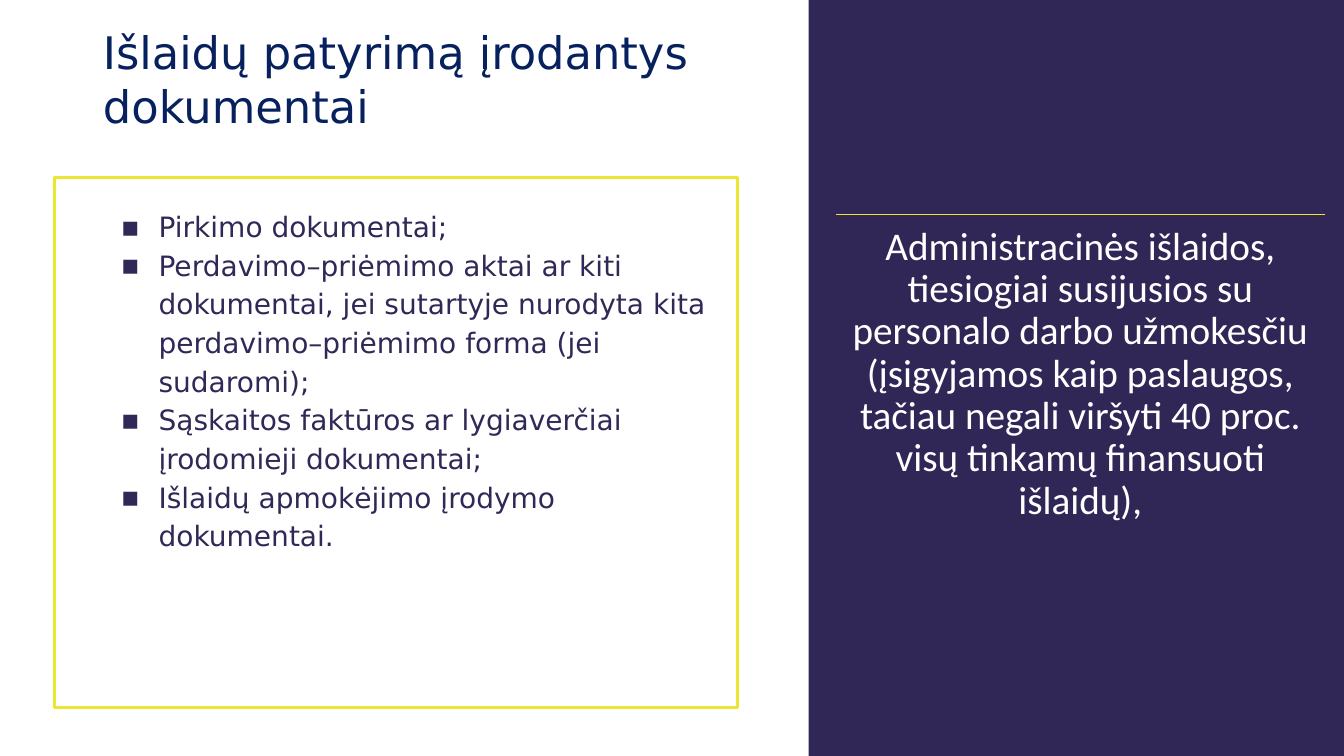
from lxml.etree import SubElement
from pptx import Presentation
from pptx.dml.color import RGBColor
from pptx.enum.shapes import MSO_CONNECTOR, MSO_SHAPE
from pptx.enum.text import PP_ALIGN
from pptx.oxml.ns import qn
from pptx.util import Pt

NAVY, PURPLE, INK = "07215E", "302757", "302857"
YELLOW, WHITE = "EDE630", "FFFFFF"
HEADING_FONT, PANEL_FONT = "DejaVu Sans", "Calibri"
SLIDE_WIDTH, SLIDE_HEIGHT = 960, 540

EVIDENCE = [
    "Pirkimo dokumentai;",
    "Perdavimo–priėmimo aktai ar kiti dokumentai, jei sutartyje nurodyta kita "
    "perdavimo–priėmimo forma (jei sudaromi);",
    "Sąskaitos faktūros ar lygiaverčiai įrodomieji dokumentai;",
    "Išlaidų apmokėjimo įrodymo dokumentai.",
]
ADMIN_COSTS = (
    "Administracinės išlaidos, tiesiogiai susijusios su personalo darbo užmokesčiu "
    "(įsigyjamos kaip paslaugos, tačiau negali viršyti 40 proc. visų tinkamų "
    "finansuoti išlaidų),"
)


def color(hex_code):
    return RGBColor.from_string(hex_code)


class SlideBuilder:
    def __init__(self, slide):
        self.shapes = slide.shapes

    def rectangle(self, left, top, width, height, fill=None, outline=None):
        box = self.shapes.add_shape(
            MSO_SHAPE.RECTANGLE, Pt(left), Pt(top), Pt(width), Pt(height))
        box.shadow.inherit = False
        if fill:
            box.fill.solid()
            box.fill.fore_color.rgb = color(fill)
        else:
            box.fill.background()
        if outline:
            box.line.color.rgb = color(outline)
            box.line.width = Pt(2.25)
        else:
            box.line.fill.background()

    def rule(self, left, top, width):
        """Draw a thin horizontal yellow line."""
        line = self.shapes.add_connector(
            MSO_CONNECTOR.STRAIGHT, Pt(left), Pt(top), Pt(left + width), Pt(top))
        line.line.color.rgb = color(YELLOW)
        line.line.width = Pt(1)
        SubElement(line._element.spPr, qn("a:effectLst"))

    def text(self, left, top, width, height, paragraphs, size, ink, font=HEADING_FONT,
             align=PP_ALIGN.LEFT, spacing=1.0, inset=None, bullet=None):
        box = self.shapes.add_textbox(Pt(left), Pt(top), Pt(width), Pt(height))
        frame = box.text_frame
        frame.word_wrap = True
        if inset is not None:
            frame.margin_left = frame.margin_right = Pt(inset)
            frame.margin_top = frame.margin_bottom = Pt(inset)
        frame.text = "\n".join(paragraphs)
        for paragraph in frame.paragraphs:
            paragraph.alignment = align
            paragraph.line_spacing = spacing
            if bullet:
                self.add_bullet(paragraph, bullet)
            for run in paragraph.runs:
                run.font.size = Pt(size)
                run.font.name = font
                run.font.color.rgb = color(ink)

    def add_bullet(self, paragraph, mark, indent=27):
        properties = paragraph._p.get_or_add_pPr()
        properties.set("marL", str(Pt(indent)))
        properties.set("indent", str(-Pt(indent)))
        SubElement(properties, qn("a:buFont"), typeface=HEADING_FONT)
        SubElement(properties, qn("a:buChar"), char=mark)


def main():
    deck = Presentation()
    deck.slide_width, deck.slide_height = Pt(SLIDE_WIDTH), Pt(SLIDE_HEIGHT)
    builder = SlideBuilder(deck.slides.add_slide(deck.slide_layouts[6]))

    panel_left = 577.6
    builder.rectangle(panel_left, 0, SLIDE_WIDTH - panel_left, SLIDE_HEIGHT, fill=PURPLE)
    builder.text(66.5, 14.4, 488, 85, ["Išlaidų patyrimą įrodantys dokumentai"], 32, NAVY)

    builder.rectangle(38.7, 126.5, 488.2, 378.7, outline=YELLOW)
    builder.text(79.2, 142.6, 447.7, 255.6, EVIDENCE, 20, INK, spacing=1.15, bullet="▪")

    note_left, note_top, note_width = 597, 153.2, 349.2
    builder.rule(note_left, note_top, note_width)
    builder.text(note_left, note_top, note_width, 324.7, [ADMIN_COSTS], 28, WHITE,
                 font=PANEL_FONT, align=PP_ALIGN.CENTER, spacing=0.9, inset=8.4)

    deck.save("out.pptx")


if __name__ == "__main__":
    main()
